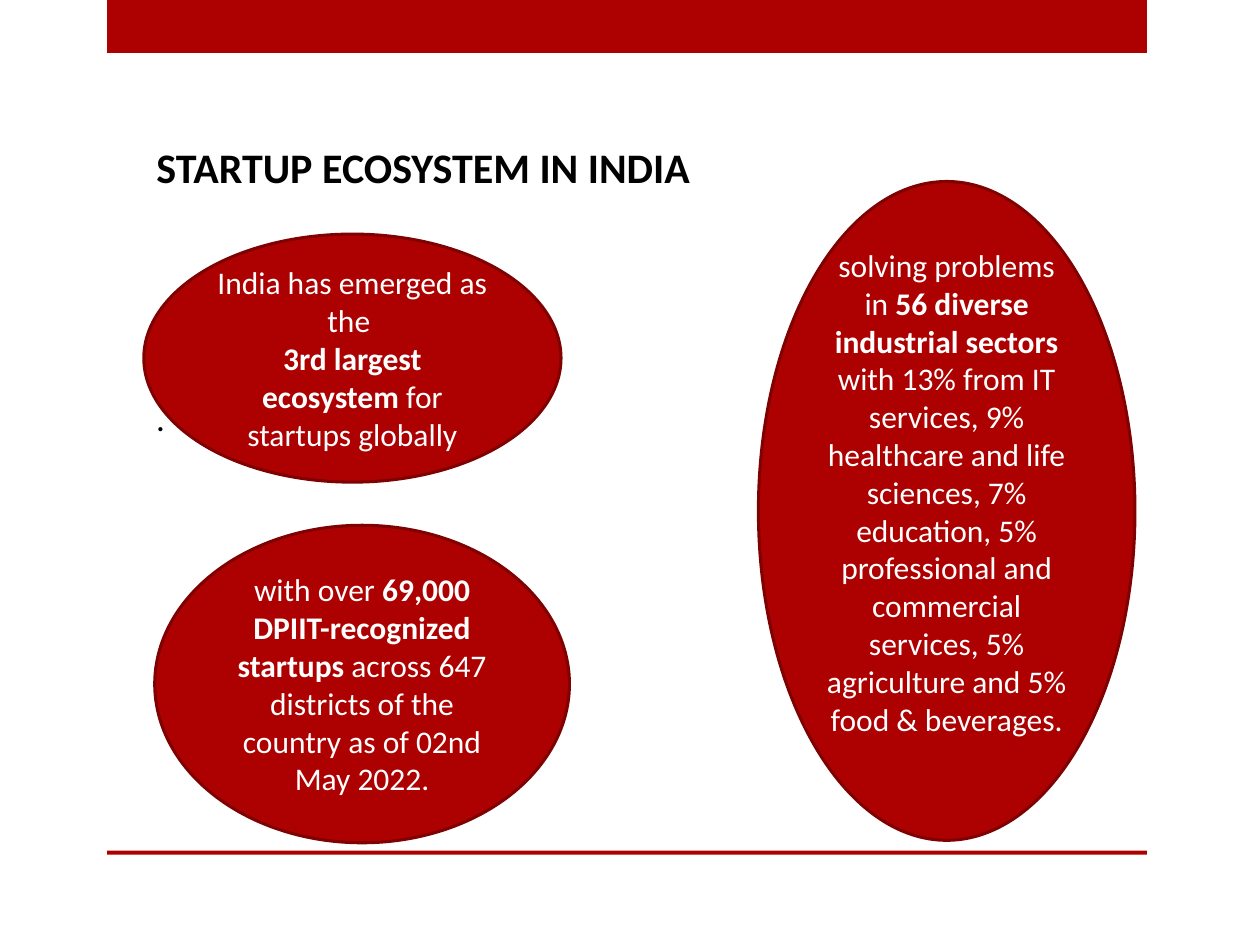
"""Build the slide on the startup ecosystem in India."""
from pptx import Presentation
from pptx.dml.color import RGBColor
from pptx.enum import shapes, text
from pptx.util import Cm, Pt

THEME = {
    "font": "Calibri", "red": "AD0101", "edge": "800101",
    "ink": "000000", "pale": "FFFFFF",
    "title": 24, "dot": 20, "body": 18, "line": 1.75,
}
TITLE = "STARTUP ECOSYSTEM IN INDIA"
HEAD = (2.9, 2.72, 19.99, 1.27)
DOT = (2.9, 7.87, 1, 1.1)
BARS = [(2.16, 0, 20.96, 1.07), (2.16, 17.15, 20.96, 0.08)]
FACTS = [
    {"at": (2.9, 4.72, 8.41, 5), "foot": 0.13, "paras": [
        [("India has emerged as the ", False)],
        [("3rd largest ecosystem ", True), ("for startups globally", False)],
    ]},
    {"at": (3.12, 10.59, 8.36, 6.4), "foot": 0.13, "paras": [
        [("with over ", False), ("69,000 DPIIT-recognized startups ", True),
         ("across 647 districts of the country as of 02nd May 2022.", False)],
    ]},
    {"at": (15.29, 3.66, 7.59, 13.28), "foot": 0.9, "paras": [
        [("solving problems in ", False), ("56 diverse industrial sectors", True),
         (" with 13% from IT services, 9% healthcare and life sciences, "
          "7% education, 5% professional and commercial services, "
          "5% agriculture and 5% food & beverages.", False)],
    ]},
]


def place(at):
    return [Cm(v) for v in at]


def color(name):
    return RGBColor.from_string(THEME[name])


def style(para, size, ink, align, bold=None):
    para.alignment = align
    font = para.font
    font.name, font.size, font.bold = THEME["font"], Pt(THEME[size]), bold
    font.color.rgb = color(ink)


def add_form(slide, kind, at):
    form = slide.shapes.add_shape(kind, *place(at))
    form.shadow.inherit = False
    form.fill.solid()
    form.fill.fore_color.rgb = color("red")
    form.line.fill.background()
    return form


def add_fact(slide, fact):
    oval = add_form(slide, shapes.MSO_SHAPE.OVAL, fact["at"])
    oval.line.color.rgb = color("edge")
    oval.line.width = Pt(THEME["line"])
    frame = oval.text_frame
    frame.word_wrap = True
    frame.vertical_anchor = text.MSO_ANCHOR.MIDDLE
    frame.margin_bottom = Cm(fact["foot"])
    for i, runs in enumerate(fact["paras"]):
        para = frame.add_paragraph() if i else frame.paragraphs[0]
        style(para, "body", "pale", text.PP_ALIGN.CENTER)
        for words, bold in runs:
            run = para.add_run()
            run.text, run.font.bold = words, bold


def add_title(slide):
    title = slide.shapes.title
    title.left, title.top, title.width, title.height = place(HEAD)
    frame = title.text_frame
    frame.text = TITLE
    frame.word_wrap = True
    frame.auto_size = text.MSO_AUTO_SIZE.NONE
    frame.vertical_anchor = text.MSO_ANCHOR.TOP
    style(frame.paragraphs[0], "title", "ink", text.PP_ALIGN.LEFT, True)


def add_dot(slide):
    frame = slide.shapes.add_textbox(*place(DOT)).text_frame
    frame.word_wrap = True
    frame.text = "."
    style(frame.paragraphs[0], "dot", "ink", text.PP_ALIGN.LEFT)


def main():
    deck = Presentation()
    deck.slide_width, deck.slide_height = Cm(25.4), Cm(19.05)
    slide = deck.slides.add_slide(deck.slide_layouts[5])
    for at in BARS:
        add_form(slide, shapes.MSO_SHAPE.RECTANGLE, at)
    add_title(slide)
    add_dot(slide)
    for fact in FACTS:
        add_fact(slide, fact)
    deck.save("out.pptx")


if __name__ == "__main__":
    main()
